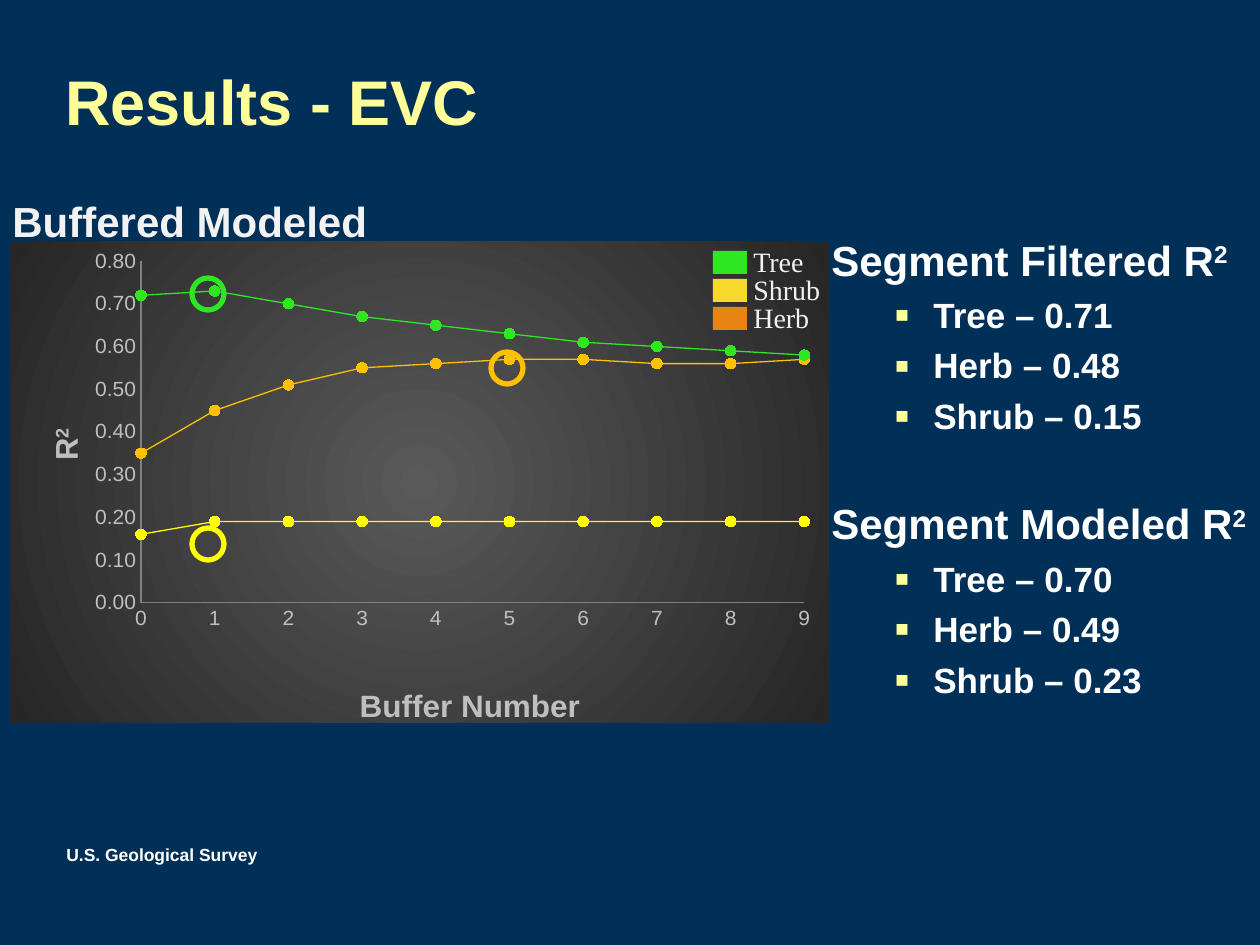
from dataclasses import dataclass

from lxml.etree import SubElement
from pptx import Presentation
from pptx.chart.data import XyChartData
from pptx.dml.color import RGBColor
from pptx.enum.chart import XL_CHART_TYPE as ChartType, XL_MARKER_STYLE as Marker
from pptx.enum.chart import XL_TICK_MARK as TickMark
from pptx.enum.shapes import MSO_SHAPE as Shape
from pptx.enum.text import MSO_ANCHOR as Anchor, MSO_AUTO_SIZE as AutoSize
from pptx.oxml import parse_xml
from pptx.oxml.ns import nsdecls, qn
from pptx.util import Emu, Pt


@dataclass(frozen=True)
class Theme:
    background: str = "002F57"
    title: str = "FFFF99"
    text: str = "FFFFFF"
    label: str = "F2F2F2"
    axis_text: str = "BFBFBF"
    axis_line: str = "808080"
    chart_center: str = "595959"
    chart_edge: str = "262626"
    tree: str = "2EE720"
    herb: str = "FFC000"
    shrub: str = "FFFF00"
    shrub_key: str = "F6D92A"
    herb_key: str = "E88414"
    font: str = "Arial"
    key_font: str = "Times New Roman"
    title_size: int = 36
    heading_size: int = 24
    bullet_size: int = 20
    axis_title_size: int = 18
    key_size: int = 16
    tick_size: int = 12
    chart_size: int = 10
    footer_size: int = 10


THEME = Theme()
CHART_BOX = (10, 242, 819, 491)
SERIES = [
    ("Series 1", THEME.shrub, [0.16] + [0.19] * 9),
    ("Series 2", THEME.tree,
     [0.72, 0.73, 0.70, 0.67, 0.65, 0.63, 0.61, 0.60, 0.59, 0.58]),
    ("Series 3", THEME.herb,
     [0.35, 0.45, 0.51, 0.55, 0.56, 0.57, 0.57, 0.56, 0.56, 0.57]),
]
BEST_BUFFERS = [(192, 278, THEME.tree), (491, 352, THEME.herb), (192, 528, THEME.shrub)]
KEYS = [("Tree", THEME.tree, 77), ("Shrub", THEME.shrub_key, 93),
        ("Herb", THEME.herb_key, 82)]
FINDINGS = [
    ("Segment Filtered R", ["Tree – 0.71", "Herb – 0.48", "Shrub – 0.15"]),
    ("Segment Modeled R", ["Tree – 0.70", "Herb – 0.49", "Shrub – 0.23"]),
]


def px(n):
    return Emu(round(n * 914400 / 126))


def rgb(color):
    return RGBColor.from_string(color)


def set_font(font, size, color, name=THEME.font, bold=False):
    font.size, font.name, font.bold = Pt(size), name, bold
    font.color.rgb = rgb(color)


def add_run(p, text, superscript=False, **style):
    r = p.add_run()
    r.text = text
    set_font(r.font, **style)
    if superscript:
        r._r.get_or_add_rPr().set("baseline", "30000")


def add_box(shapes, box, wrap=True, anchor=Anchor.TOP):
    tf = shapes.add_textbox(*map(px, box)).text_frame
    tf.word_wrap = wrap
    tf.auto_size = AutoSize.NONE if wrap else AutoSize.SHAPE_TO_FIT_TEXT
    tf.vertical_anchor = anchor
    return tf


def add_text(shapes, text, box, wrap=False, anchor=Anchor.TOP, **style):
    add_run(add_box(shapes, box, wrap, anchor).paragraphs[0], text, **style)


def add_shape(shapes, kind, box, fill=None, line=None):
    s = shapes.add_shape(kind, *map(px, box))
    s.shadow.inherit = False
    if fill:
        s.fill.solid()
        s.fill.fore_color.rgb = rgb(fill)
    else:
        s.fill.background()
    if line:
        s.line.color.rgb = rgb(line)
        s.line.width = Pt(3)
    else:
        s.line.fill.background()


def set_bullet(p):
    p.level = 1
    pPr = p._p.get_or_add_pPr()
    pPr.set("marL", str(px(102)))
    pPr.set("indent", str(px(-39)))
    SubElement(SubElement(pPr, qn("a:buClr")), qn("a:srgbClr"), val=THEME.title)
    SubElement(pPr, qn("a:buSzPct"), val="125000")
    SubElement(pPr, qn("a:buFont"), typeface=THEME.font)
    SubElement(pPr, qn("a:buChar"), char="▪")


def set_layout(parent, **fractions):
    """Place a chart part by fractions (x, y, w, h) of the chart frame."""
    layout = parent.find(qn("c:layout"))
    if layout is None:
        layout = parent.makeelement(qn("c:layout"))
        tx = parent.find(qn("c:tx"))
        if tx is None:
            parent.insert(0, layout)
        else:
            tx.addnext(layout)
    manual = SubElement(layout, qn("c:manualLayout"))
    if "w" in fractions:
        SubElement(manual, qn("c:layoutTarget"), val="inner")
    for axis in "xy":
        SubElement(manual, qn(f"c:{axis}Mode"), val="edge")
    for name, value in fractions.items():
        SubElement(manual, qn(f"c:{name}"), val=str(value))


def fill_chart_area(chart):
    """Add a radial gradient, which has no public chart property."""
    stops = "".join(
        f'<a:gs pos="{pos}"><a:srgbClr val="{color}"/></a:gs>'
        for pos, color in ((0, THEME.chart_center), (100000, THEME.chart_edge)))
    chart.element.find(qn("c:txPr")).addprevious(parse_xml(
        f'<c:spPr {nsdecls("c", "a")}><a:gradFill><a:gsLst>{stops}</a:gsLst>'
        '<a:path path="circle"><a:fillToRect l="50000" t="50000" r="50000" b="50000"/>'
        '</a:path></a:gradFill><a:ln><a:noFill/></a:ln></c:spPr>'))


def format_axis(axis, title, top, step, number_format, x, y, power=None):
    axis.has_major_gridlines = axis.has_minor_gridlines = False
    axis.major_tick_mark = axis.minor_tick_mark = TickMark.NONE
    axis.minimum_scale, axis.maximum_scale, axis.major_unit = 0, top, step
    axis.tick_labels.number_format = number_format
    axis.tick_labels.number_format_is_linked = False
    set_font(axis.tick_labels.font, THEME.tick_size, THEME.axis_text)
    axis.format.line.color.rgb = rgb(THEME.axis_line)
    axis.format.line.width = Pt(0.75)
    p = axis.axis_title.text_frame.paragraphs[0]
    style = dict(size=THEME.axis_title_size, color=THEME.axis_text, bold=True)
    add_run(p, title, **style)
    if power:
        add_run(p, power, superscript=True, **style)
    set_layout(axis.axis_title._element, x=x, y=y)


def add_buffer_chart(shapes):
    data = XyChartData(number_format="0.00")
    for name, _, values in SERIES:
        series = data.add_series(name)
        for buffer, value in enumerate(values):
            series.add_data_point(buffer, value)
    chart = shapes.add_chart(ChartType.XY_SCATTER_LINES, *map(px, CHART_BOX), data).chart
    chart.has_legend = chart.has_title = False
    set_font(chart.font, THEME.chart_size, "000000")
    fill_chart_area(chart)
    plot = chart.plots[0]
    plot.vary_by_categories = False
    for series, (_, color, _) in zip(plot.series, SERIES):
        series.smooth = False
        series.format.line.color.rgb = rgb(color)
        series.format.line.width = Pt(0.75)
        series.marker.style, series.marker.size = Marker.CIRCLE, 6
        series.marker.format.fill.solid()
        series.marker.format.fill.fore_color.rgb = rgb(color)
        series.marker.format.line.color.rgb = rgb(color)
    format_axis(chart.category_axis, "Buffer Number", 9, 1, "0", 0.42, 0.91)
    format_axis(chart.value_axis, "R", 0.8, 0.1, "0.00", 0.04, 0.38, power="2")
    set_layout(chart.element.find(".//" + qn("c:plotArea")), x=0.16, y=0.04, w=0.81, h=0.71)


def add_key(shapes):
    group = shapes.add_group_shape().shapes
    for i, (name, color, width) in enumerate(KEYS):
        add_shape(group, Shape.RECTANGLE, (713, 251 + 28 * i, 34, 23), fill=color)
        add_text(group, name, (741, 238 + 28 * i, width, 47), size=THEME.key_size,
                 color=THEME.label, name=THEME.key_font)


def add_findings(shapes):
    tf = add_box(shapes, (819, 224, 451, 520))
    tf.margin_top = px(10)
    heading = dict(size=THEME.heading_size, color=THEME.text, bold=True)
    for i, (title, items) in enumerate(FINDINGS):
        p = tf.add_paragraph() if i else tf.paragraphs[0]
        if i:
            p.space_before = Pt(35)
        add_run(p, title, **heading)
        add_run(p, "2", superscript=True, **heading)
        for item in items:
            p = tf.add_paragraph()
            set_bullet(p)
            p.space_before = Pt(5)
            add_run(p, item, size=THEME.bullet_size, color=THEME.text, bold=True)


def main():
    prs = Presentation()
    prs.slide_width, prs.slide_height = px(1260), px(945)
    s = prs.slides.add_slide(prs.slide_layouts[6])
    s.background.fill.solid()
    s.background.fill.fore_color.rgb = rgb(THEME.background)
    add_text(s.shapes, "U.S. Geological Survey", (54, 838, 217, 34),
             size=THEME.footer_size, color=THEME.text, bold=True)
    add_text(s.shapes, "Results - EVC", (53, 21, 1144, 158), wrap=True,
             anchor=Anchor.MIDDLE, size=THEME.title_size, color=THEME.title, bold=True)
    add_text(s.shapes, "Buffered Modeled", (0, 189, 383, 63),
             size=THEME.heading_size, color=THEME.label, bold=True)
    add_buffer_chart(s.shapes)
    for x, y, color in BEST_BUFFERS:
        add_shape(s.shapes, Shape.OVAL, (x, y, 32, 32), line=color)
    add_key(s.shapes)
    add_findings(s.shapes)
    prs.save("out.pptx")


if __name__ == "__main__":
    main()
